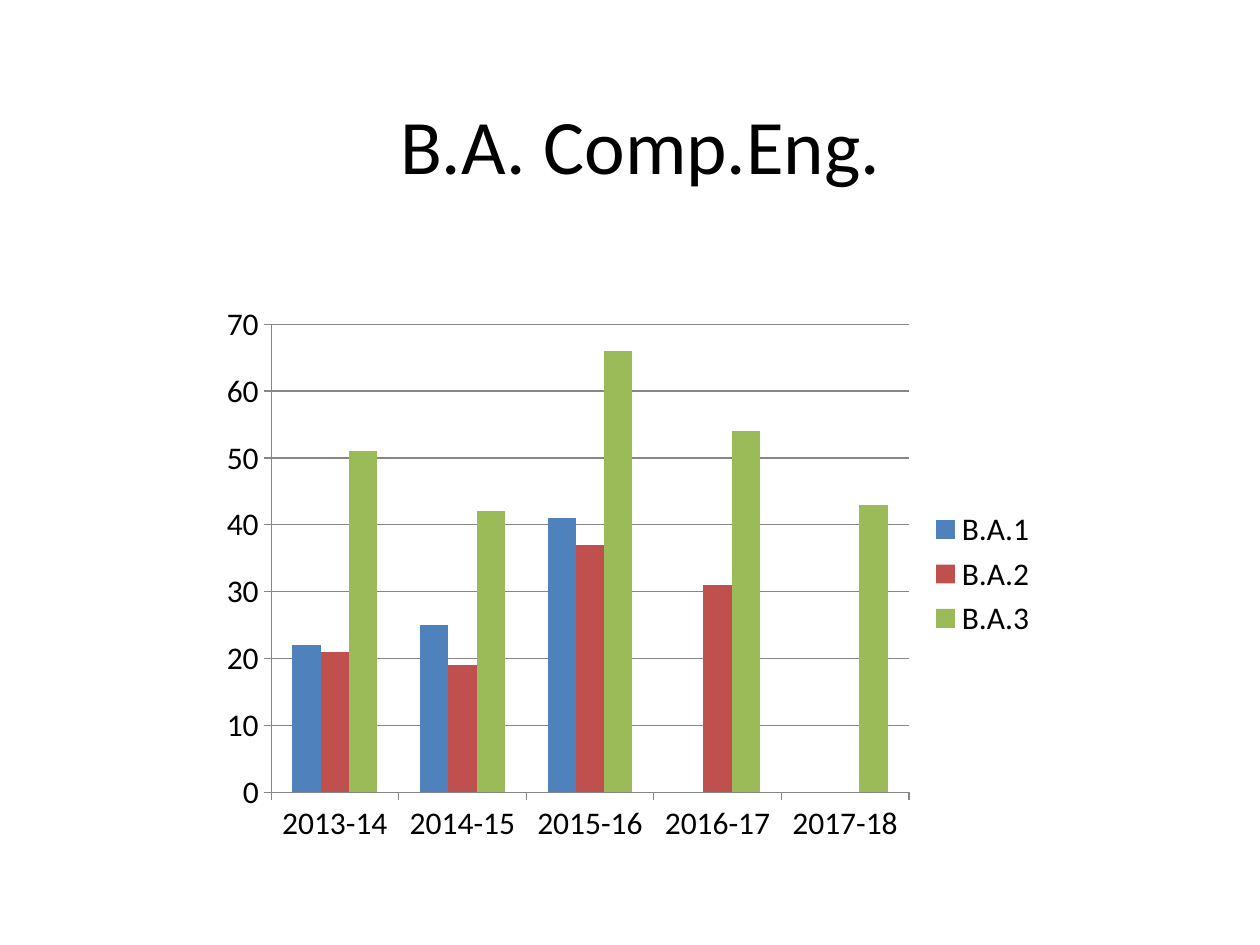
from dataclasses import dataclass
from typing import Optional

from pptx import Presentation
from pptx import util as u
from pptx.chart.data import CategoryChartData
from pptx.dml.color import RGBColor
from pptx.enum import chart as ch, text

FONT = "Calibri"
BLACK = RGBColor(0x00, 0x00, 0x00)
GRAY = RGBColor(0x86, 0x86, 0x86)
BLUE = RGBColor(0x4F, 0x81, 0xBD)
RED = RGBColor(0xC0, 0x50, 0x4D)
GREEN = RGBColor(0x9B, 0xBB, 0x59)


@dataclass
class Series:
    name: str
    values: tuple[Optional[float], ...]
    color: RGBColor


YEARS = ("2013-14", "2014-15", "2015-16", "2016-17", "2017-18")
CLASSES = (
    Series("B.A.1", (22, 25, 41, None, None), BLUE),
    Series("B.A.2", (21, 19, 37, 31, None), RED),
    Series("B.A.3", (51, 42, 66, 54, 43), GREEN),
)


def style_font(font, size: int) -> None:
    font.name = FONT
    font.size = u.Pt(size)
    font.bold = False
    font.color.rgb = BLACK


def style_line(line) -> None:
    line.color.rgb = GRAY
    line.width = u.Pt(0.75)


def add_title(s, title: str) -> None:
    sp = s.shapes.title
    sp.left, sp.top, sp.width, sp.height = u.Pt(60), u.Pt(24), u.Pt(612), u.Pt(116)
    tf = sp.text_frame
    tf.text = title
    tf.vertical_anchor = text.MSO_ANCHOR.MIDDLE
    p = tf.paragraphs[0]
    p.alignment = text.PP_ALIGN.CENTER
    style_font(p.runs[0].font, 44)


def add_column_chart(s) -> None:
    data = CategoryChartData()
    data.categories = YEARS
    for item in CLASSES:
        data.add_series(item.name, item.values)
    chart = s.shapes.add_chart(
        ch.XL_CHART_TYPE.COLUMN_CLUSTERED,
        u.Pt(120), u.Pt(168), u.Pt(480), u.Pt(320), data,
    ).chart
    style_font(chart.font, 18)
    chart.has_title = False

    # Columns
    plot = chart.plots[0]
    plot.gap_width = 150
    plot.overlap = 0
    plot.vary_by_categories = False
    for series, item in zip(plot.series, CLASSES):
        series.format.fill.solid()
        series.format.fill.fore_color.rgb = item.color
        series.invert_if_negative = False

    # Axes and gridlines
    for axis in (chart.category_axis, chart.value_axis):
        axis.major_tick_mark = ch.XL_TICK_MARK.OUTSIDE
        axis.minor_tick_mark = ch.XL_TICK_MARK.NONE
        style_line(axis.format.line)
    axis = chart.value_axis
    axis.minimum_scale, axis.maximum_scale, axis.major_unit = 0, 70, 10
    axis.has_major_gridlines = True
    style_line(axis.major_gridlines.format.line)

    # Legend
    chart.has_legend = True
    chart.legend.position = ch.XL_LEGEND_POSITION.RIGHT
    chart.legend.include_in_layout = False


def main() -> None:
    prs = Presentation()
    prs.slide_width, prs.slide_height = u.Pt(720), u.Pt(540)
    s = prs.slides.add_slide(prs.slide_layouts[0])
    subtitle = s.placeholders[1].element
    subtitle.getparent().remove(subtitle)
    add_title(s, "B.A. Comp.Eng.")
    add_column_chart(s)
    prs.save("out.pptx")


if __name__ == "__main__":
    main()
